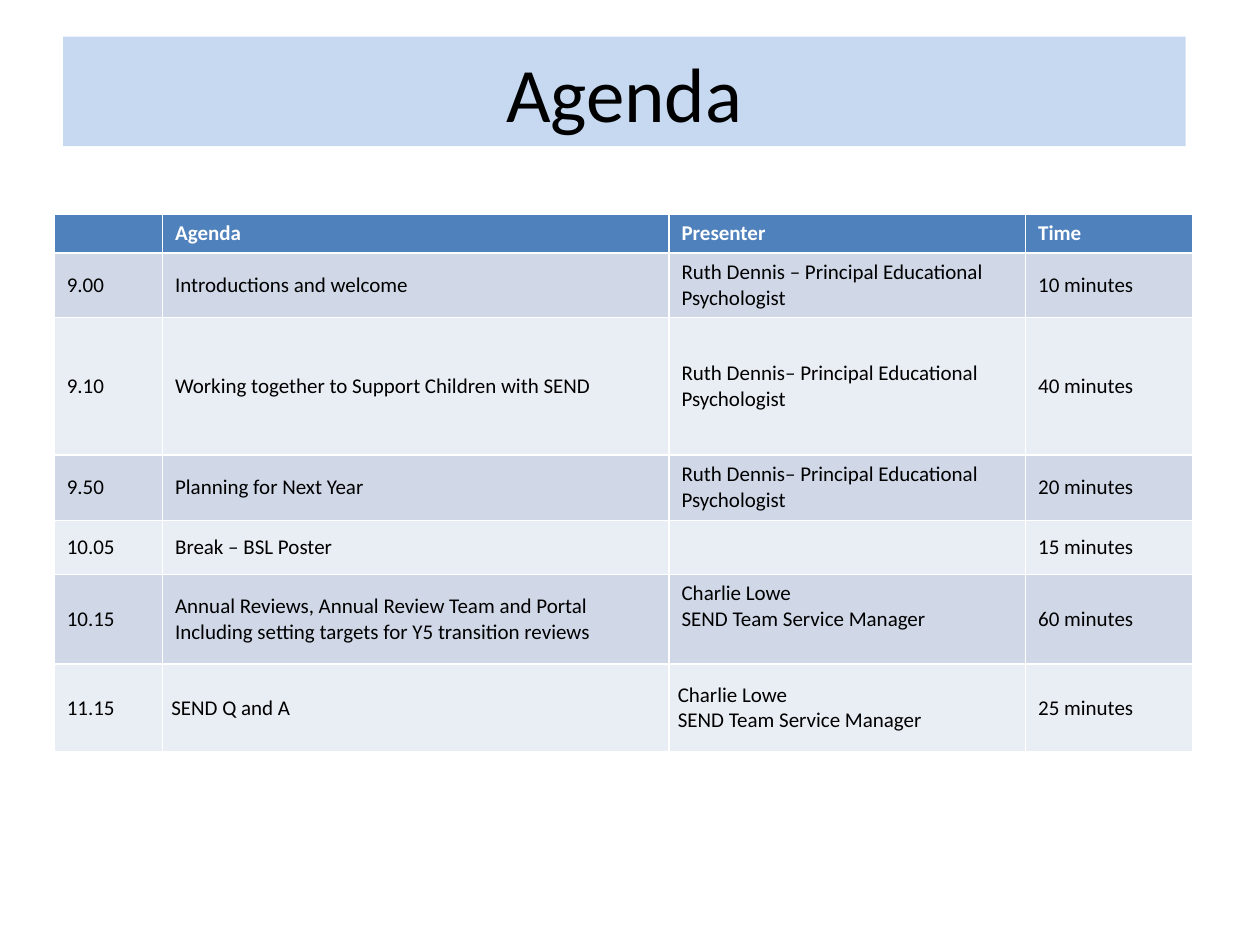
from pptx import Presentation
from pptx.dml.color import RGBColor
from pptx.enum.text import MSO_ANCHOR, PP_ALIGN
from pptx.util import Inches, Pt

MIDDLE = MSO_ANCHOR.MIDDLE
CENTER = PP_ALIGN.CENTER
TITLE_ONLY = 5

COLORS = {
    "title_band": "C6D9F1",
    "header": "4F81BD",
    "odd_row": "D0D8E8",
    "even_row": "E9EDF4",
    "dark_text": "000000",
    "light_text": "FFFFFF",
}


def rgb(name):
    return RGBColor.from_string(COLORS[name])


def format_text(paragraph, color, **font_values):
    for attribute, value in font_values.items():
        setattr(paragraph.font, attribute, value)
    paragraph.font.color.rgb = rgb(color)


prs = Presentation()
prs.slide_width, prs.slide_height = Inches(10), Inches(7.5)
slide = prs.slides.add_slide(prs.slide_layouts[TITLE_ONLY])

# Title band
title = slide.shapes.title
title_place = {"left": 0.5, "top": 0.29, "width": 8.91, "height": 0.87}
for attribute, value in title_place.items():
    setattr(title, attribute, Inches(value))
title.fill.solid()
title.fill.fore_color.rgb = rgb("title_band")
title.text_frame.text = "Agenda"
title.text_frame.vertical_anchor = MIDDLE
heading = title.text_frame.paragraphs[0]
heading.alignment = CENTER
format_text(heading, "dark_text", name="Calibri", size=Pt(44))

# Agenda content: row height and cell texts
manager = "Charlie Lowe\nSEND Team Service Manager"
agenda = [
    (0.31, ["", "Agenda", "Presenter", "Time"]),
    (0.51, ["9.00", "Introductions and welcome",
            "Ruth Dennis – Principal Educational Psychologist", "10 minutes"]),
    (1.09, ["9.10", "Working together to Support Children with SEND",
            "Ruth Dennis– Principal Educational Psychologist", "40 minutes"]),
    (0.52, ["9.50", "Planning for Next Year",
            "Ruth Dennis– Principal Educational Psychologist", "20 minutes"]),
    (0.43, ["10.05", "Break – BSL Poster", "", "15 minutes"]),
    (0.71, ["10.15",
            "Annual Reviews, Annual Review Team and Portal\n"
            "Including setting targets for Y5 transition reviews",
            manager, "60 minutes"]),
    (0.7, ["11.15", "SEND Q and A", manager, "25 minutes"]),
]
column_widths = [0.86, 4.02, 2.83, 1.33]

# Agenda table; its default style draws the white rules
table = slide.shapes.add_table(
    len(agenda), len(column_widths), Inches(0.43), Inches(1.7),
    Inches(sum(column_widths)), Inches(sum(height for height, _ in agenda)),
).table
for column, width in zip(table.columns, column_widths):
    column.width = Inches(width)

for row_index, (height, texts) in enumerate(agenda):
    table.rows[row_index].height = Inches(height)
    is_header = row_index == 0
    band = "header" if is_header else "odd_row" if row_index % 2 else "even_row"
    text_color = "light_text" if is_header else "dark_text"
    for cell, text in zip(table.rows[row_index].cells, texts):
        cell.fill.solid()
        cell.fill.fore_color.rgb = rgb(band)
        cell.vertical_anchor = MIDDLE
        cell.text = text
        for paragraph in cell.text_frame.paragraphs:
            format_text(paragraph, text_color, name="Calibri", size=Pt(12),
                        bold=is_header)

# Cells with their own margins
tight = {"margin_left": 0.07, "margin_right": 0.07,
         "margin_top": 0, "margin_bottom": 0}
special_margins = {
    (5, 2): {"margin_bottom": 0.25},
    (6, 1): tight,
    (6, 2): tight,
}
for position, margins in special_margins.items():
    for attribute, value in margins.items():
        setattr(table.cell(*position), attribute, Inches(value))

prs.save("out.pptx")
